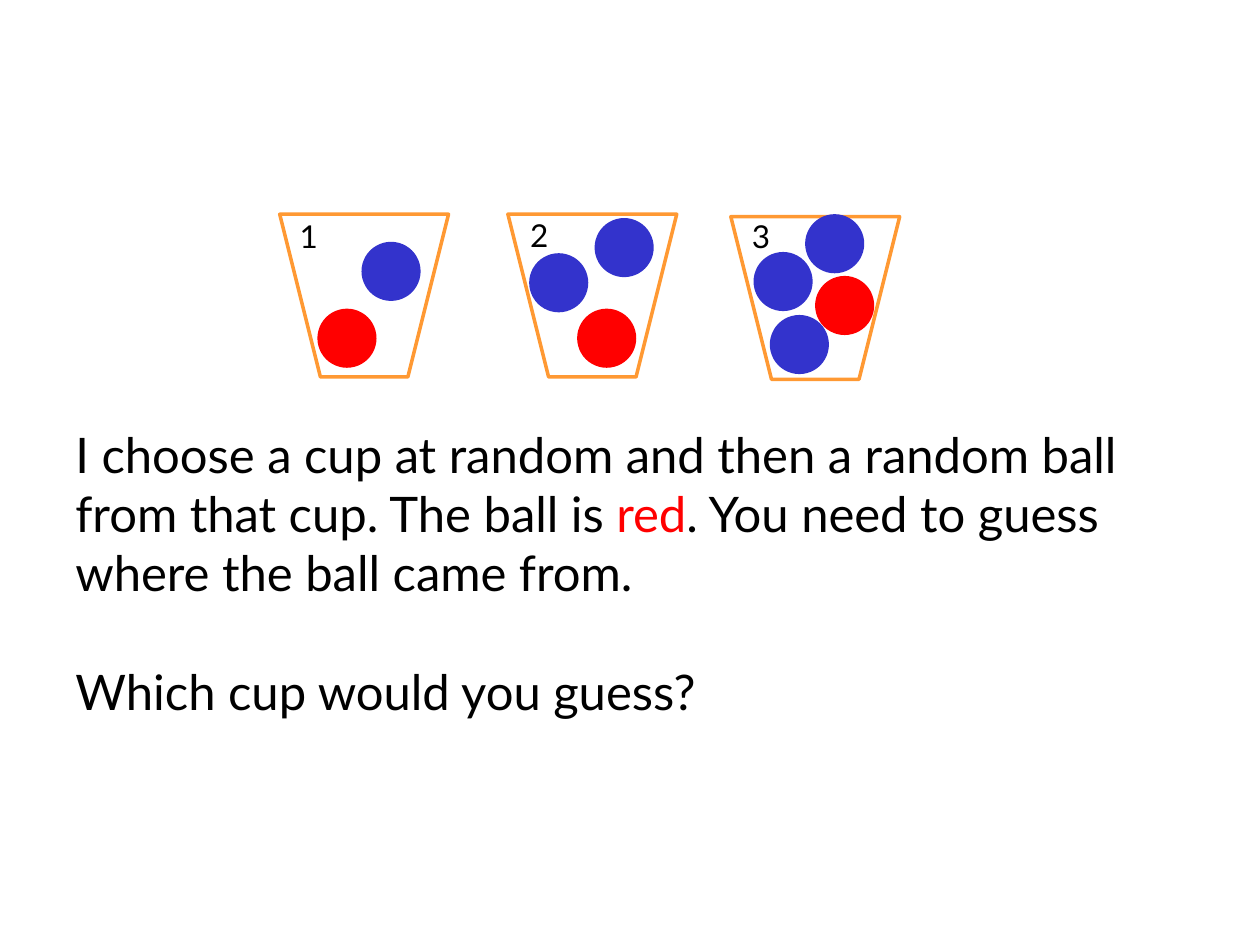
from pptx import Presentation
from pptx.dml.color import RGBColor
from pptx.enum.shapes import MSO_SHAPE as Shape
from pptx.enum.text import MSO_ANCHOR as Anchor, PP_ALIGN as Align
from pptx.util import Pt

BLACK, RED, BLUE, ORANGE = "000000", "FF0000", "3333CC", "FF9933"
CUP_SIZE = (96.5, 93)
BALL_SIZE = (33.8, 33.8)
LABEL_SIZE = (36, 36)

CUPS = [
    {"label": "1", "at": (159.8, 122.4), "label_at": (158.4, 116.8),
     "balls": [(RED, 181.4, 176.4), (BLUE, 206.6, 138.2)]},
    {"label": "2", "at": (290.2, 122.4), "label_at": (290.2, 116),
     "balls": [(RED, 329.8, 176.4), (BLUE, 339.8, 124.6), (BLUE, 302.4, 144.7)]},
    {"label": "3", "at": (417.6, 123.8), "label_at": (416.9, 116.8),
     "balls": [(RED, 465.8, 157.7), (BLUE, 460.1, 122.4), (BLUE, 430.6, 144),
               (BLUE, 439.9, 180)]},
]
TEXTS = [
    ((36, 239, 648, 108.7),
     [("I choose a cup at random and then a random ball from that cup. The ball is ", BLACK),
      ("red", RED),
      (". You need to guess where the ball came from.", BLACK)]),
    ((36, 374.4, 584.6, 41), [("Which cup would you guess?", BLACK)]),
]


def color(hex_value):
    return RGBColor.from_string(hex_value)


def add_shape(slide, kind, at, size, fill=None, line=None):
    shape = slide.shapes.add_shape(kind, *map(Pt, (*at, *size)))
    shape.shadow.inherit = False
    if fill:
        shape.fill.solid()
        shape.fill.fore_color.rgb = color(fill)
    else:
        shape.fill.background()
    if line:
        shape.line.color.rgb = color(line)
        shape.line.width = Pt(2)
    else:
        shape.line.fill.background()
    return shape


def write_text(shape, runs, size=28, align=Align.LEFT, anchor=Anchor.TOP, margin=None):
    frame = shape.text_frame
    frame.word_wrap = True
    frame.vertical_anchor = anchor
    if margin is not None:
        frame.margin_left = frame.margin_right = Pt(margin)
        frame.margin_top = frame.margin_bottom = Pt(margin)
    paragraph = frame.paragraphs[0]
    paragraph.alignment = align
    for text, run_color in runs:
        run = paragraph.add_run()
        run.text = text
        run.font.name = "Lato"
        run.font.size = Pt(size)
        run.font.color.rgb = color(run_color)


def main():
    """Build the slide with three cups of balls and the guessing question."""
    presentation = Presentation()
    presentation.slide_width, presentation.slide_height = Pt(720), Pt(540)
    slide = presentation.slides.add_slide(presentation.slide_layouts[6])
    for cup in CUPS:
        outline = add_shape(slide, Shape.TRAPEZOID, cup["at"], CUP_SIZE, line=ORANGE)
        outline.rotation = 180
        for fill, left, top in cup["balls"]:
            add_shape(slide, Shape.OVAL, (left, top), BALL_SIZE, fill=fill)
        label = add_shape(slide, Shape.OVAL, cup["label_at"], LABEL_SIZE)
        write_text(label, [(cup["label"], BLACK)], size=18,
                   align=Align.CENTER, anchor=Anchor.MIDDLE, margin=0)
    for box, runs in TEXTS:
        write_text(slide.shapes.add_textbox(*map(Pt, box)), runs)
    presentation.save("out.pptx")


if __name__ == "__main__":
    main()
